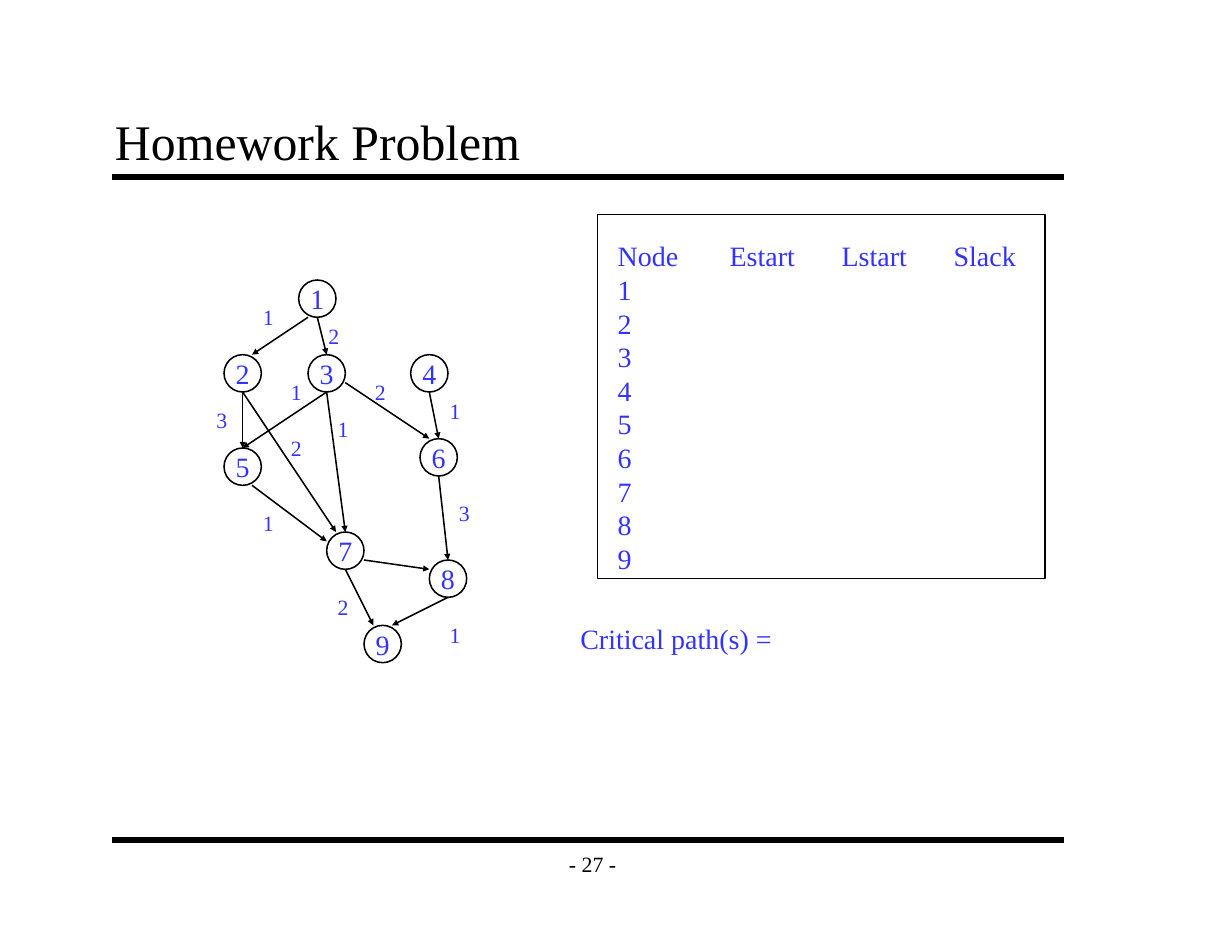
from lxml import etree
from pptx import Presentation
from pptx.dml.color import RGBColor
from pptx.enum.shapes import MSO_CONNECTOR, MSO_SHAPE
from pptx.enum.text import MSO_ANCHOR, PP_ALIGN
from pptx.oxml.ns import qn
from pptx.util import Cm, Pt

STRAIGHT = MSO_CONNECTOR.STRAIGHT
ELLIPSE, RECTANGLE = MSO_SHAPE.OVAL, MSO_SHAPE.RECTANGLE
TOP, MIDDLE, BOTTOM = MSO_ANCHOR.TOP, MSO_ANCHOR.MIDDLE, MSO_ANCHOR.BOTTOM
LEFT, CENTER = PP_ALIGN.LEFT, PP_ALIGN.CENTER

FONT = "Times New Roman"
BLACK, BLUE = "000000", "3333FF"
GRID = 2.54 / 12  # every position below counts twelfths of an inch
NODE_SIZE = 4
LABEL_SIZE = (3.6, 4)

TITLE = "Homework Problem"
PAGE_NUMBER = "- 27 -"
CRITICAL_PATH = "Critical path(s) ="
HEADINGS = ["Node", "Estart", "Lstart", "Slack"]
COLUMN_STEP = 12
RULE_HEIGHTS = [19, 90]

NODES = {  # name: left, top
    "1": (32, 30), "2": (24, 38), "3": (33, 38),
    "4": (44, 38), "5": (24, 48), "6": (45, 47),
    "7": (35, 57), "8": (46, 60), "9": (39, 67),
}

# Points on a node, measured from its top left corner
NODE_TOP, NODE_BOTTOM = (2, 0), (2, 4)
UPPER_LEFT, UPPER_RIGHT, LEFT_SIDE = (1, 0), (3, 0), (0, 1)
LOWER_LEFT, LOWER_RIGHT, RIGHT_SIDE = (1, 4), (3, 4), (4, 3)

EDGES = [  # from, leaving at, to, arriving at, delay, delay position
    ("1", LOWER_LEFT, "2", UPPER_RIGHT, "1", (27, 32)),
    ("1", NODE_BOTTOM, "3", NODE_TOP, "2", (34, 34)),
    ("2", NODE_BOTTOM, "7", UPPER_LEFT, "2", (30, 46)),
    ("3", NODE_BOTTOM, "5", NODE_TOP, "1", (30, 40)),
    ("3", NODE_BOTTOM, "7", NODE_TOP, "1", (35, 44)),
    ("2", NODE_BOTTOM, "5", NODE_TOP, "3", (22, 43)),
    ("5", LOWER_RIGHT, "7", LEFT_SIDE, "1", (27, 54)),
    ("3", RIGHT_SIDE, "6", UPPER_LEFT, "2", (39, 40)),
    ("4", NODE_BOTTOM, "6", NODE_TOP, "1", (47, 42)),
    ("7", RIGHT_SIDE, "8", LEFT_SIDE, None, None),
    ("6", NODE_BOTTOM, "8", NODE_TOP, "3", (48, 53)),
    ("8", NODE_BOTTOM, "9", UPPER_RIGHT, "1", (47, 66)),
    ("7", NODE_BOTTOM, "9", UPPER_LEFT, "2", (35, 63)),
]


def units(*values):
    """Turn grid counts into lengths."""
    return [Cm(value * GRID) for value in values]


def color(hex_string):
    return RGBColor.from_string(hex_string)


def write(shape, text, size=18, ink=BLUE, align=LEFT, anchor=TOP, wrap=False, inset=None):
    frame = shape.text_frame
    frame.word_wrap = wrap
    frame.vertical_anchor = anchor
    if inset:
        frame.margin_left = frame.margin_right = Cm(inset[0])
        frame.margin_top = frame.margin_bottom = Cm(inset[1])
    for index, line in enumerate(text.split("\n")):
        paragraph = frame.paragraphs[0] if index == 0 else frame.add_paragraph()
        paragraph.alignment = align
        run = paragraph.add_run()
        run.text = line
        run.font.name = FONT
        run.font.size = Pt(size)
        run.font.color.rgb = color(ink)


def add_text(slide, text, box, **text_format):
    shape = slide.shapes.add_textbox(*units(*box))
    write(shape, text, **text_format)
    return shape


def add_outline(slide, kind, box):
    shape = slide.shapes.add_shape(kind, *units(*box))
    shape.shadow.inherit = False
    shape.fill.background()
    shape.line.color.rgb = color(BLACK)
    shape.line.width = Pt(1)
    return shape


def add_line(slide, start, end, width=1, arrow=False):
    connector = slide.shapes.add_connector(STRAIGHT, *units(*start, *end))
    connector.line.color.rgb = color(BLACK)
    connector.line.width = Pt(width)
    if arrow:
        line = connector.line._get_or_add_ln()
        etree.SubElement(line, qn("a:tailEnd"), type="triangle", w="sm", len="sm")
    etree.SubElement(connector._element.spPr, qn("a:effectLst"))


def add_tab_stops(paragraph, count, step):
    stops = etree.SubElement(paragraph._p.get_or_add_pPr(), qn("a:tabLst"))
    for position in units(*(step * number for number in range(1, count + 1))):
        etree.SubElement(stops, qn("a:tab"), pos=str(position), algn="l")


def point_on(node, offset):
    return [corner + shift for corner, shift in zip(NODES[node], offset)]


def add_graph(slide):
    for name, position in NODES.items():
        circle = add_outline(slide, ELLIPSE, (*position, NODE_SIZE, NODE_SIZE))
        write(circle, name, align=CENTER, anchor=MIDDLE)
    for source, leaving, target, arriving, delay, position in EDGES:
        add_line(slide, point_on(source, leaving), point_on(target, arriving), arrow=True)
        if delay:
            add_text(slide, delay, (*position, *LABEL_SIZE), size=14)


def add_answer_area(slide):
    rows = "\n".join(["\t".join(HEADINGS), *NODES])
    answers = add_text(slide, rows, (65, 25, 46.5, 37), wrap=True)
    add_tab_stops(answers.text_frame.paragraphs[0], len(HEADINGS) - 1, COLUMN_STEP)
    add_outline(slide, RECTANGLE, (64, 23, 48, 39))
    add_text(slide, CRITICAL_PATH, (61, 66, 24, 5))


def main():
    presentation = Presentation()
    presentation.slide_width, presentation.slide_height = units(132, 102)
    slide = presentation.slides.add_slide(presentation.slide_layouts[6])
    for height in RULE_HEIGHTS:
        add_line(slide, (12, height), (114, height), width=4)
    add_text(slide, PAGE_NUMBER, (59, 90, 9, 5), size=14, ink=BLACK,
             align=CENTER, anchor=MIDDLE, inset=(0.28, 0.15))
    add_text(slide, TITLE, (11, 11, 102, 8), size=32, ink=BLACK,
             anchor=BOTTOM, wrap=True, inset=(0.28, 0.15))
    add_graph(slide)
    add_answer_area(slide)
    presentation.save("out.pptx")


if __name__ == "__main__":
    main()
